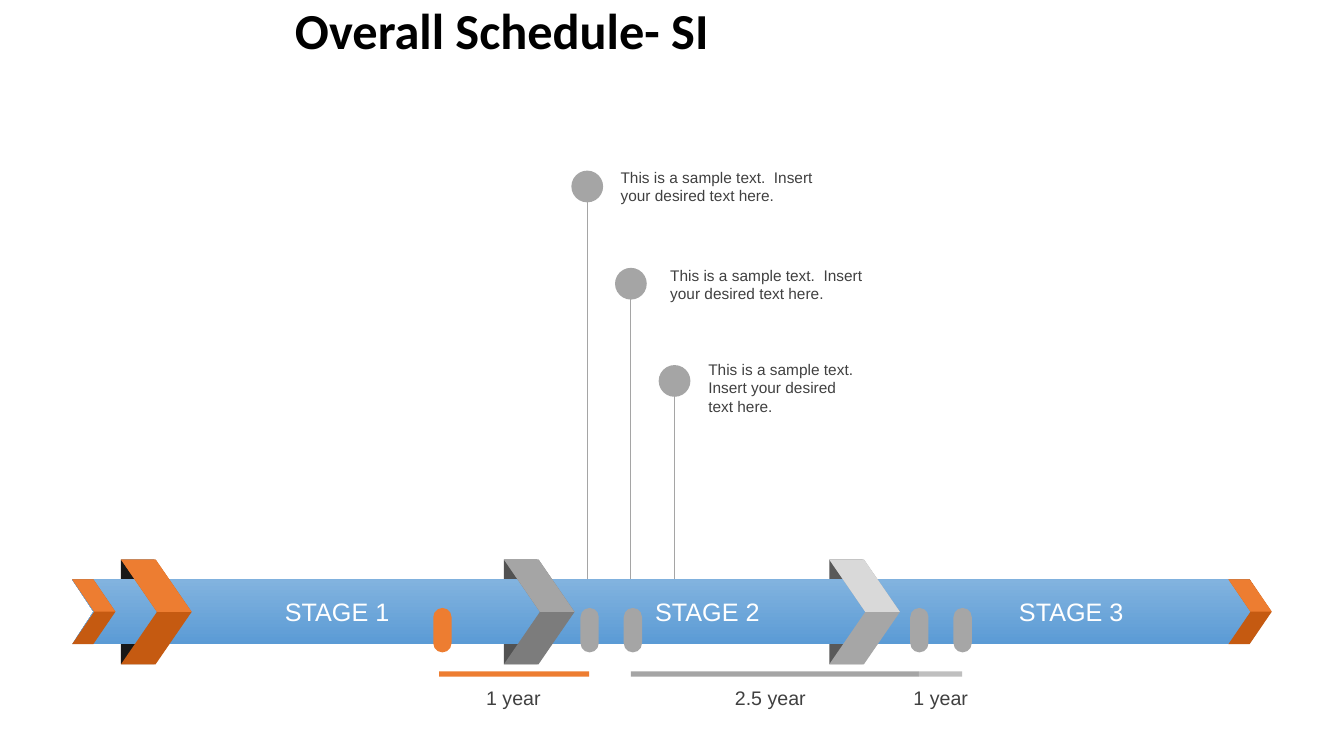
from dataclasses import dataclass

import pptx
import pptx.util
import pptx.dml.color
import pptx.enum.shapes
import pptx.enum.text
import pptx.oxml

Cm = pptx.util.Cm
Pt = pptx.util.Pt
Kind = pptx.enum.shapes.MSO_SHAPE
Align = pptx.enum.text.PP_ALIGN
Anchor = pptx.enum.text.MSO_ANCHOR
Fit = pptx.enum.text.MSO_AUTO_SIZE


@dataclass(frozen=True)
class Theme:
    head: str = "Calibri"
    body: str = "Arial"
    title: int = 36
    stage: int = 18
    span: int = 14
    note: int = 11
    black: str = "000000"
    white: str = "FFFFFF"
    ink: str = "404040"
    blue: str = "5B9BD5"
    sky: str = "82B3DF"
    orange: str = "ED7D31"
    rust: str = "C55A11"
    gray: str = "A5A5A5"
    ash: str = "A6A6A6"
    slate: str = "7C7C7C"
    pale: str = "D9D9D9"
    silver: str = "BFBFBF"
    night: str = "181717"
    coal: str = "525252"
    stone: str = "595959"


LOOK = Theme()
NOTE = "This is a sample text.  Insert your desired text here."
BIG = (14.1, 1.78, 2.64)  # top, width, height of a stage arrow
SMALL = (14.6, 1.09, 1.63)  # top, width, height of an end arrow
SLANT = 0.51


def rgb(code):
    return pptx.dml.color.RGBColor.from_string(code)


def paint(shape, color):
    shape.shadow.inherit = False
    shape.fill.solid()
    shape.fill.fore_color.rgb = rgb(color)
    shape.line.fill.background()


def block(shapes, kind, box, color, bend=None):
    shape = shapes.add_shape(kind, *map(Cm, box))
    if bend is not None:
        shape.adjustments[0] = bend
    paint(shape, color)
    return shape


def style(part, font):
    for key, value in font.items():
        setattr(part.font, key, value)


def label(shapes, text, box, size, color, wrap=False, align=Align.LEFT):
    shape = shapes.add_textbox(*map(Cm, box))
    frame = shape.text_frame
    frame.word_wrap = wrap
    frame.auto_size = Fit.SHAPE_TO_FIT_TEXT
    para = frame.paragraphs[0]
    para.alignment = align
    run = para.add_run()
    run.text = text
    style(run, {"name": LOOK.body, "size": Pt(size)})
    run.font.color.rgb = rgb(color)


def arrow(shapes, left, form, light, dark):
    """Draw a chevron whose upper half is lighter."""
    top, wide, high = form
    group = shapes.add_group_shape().shapes
    block(group, Kind.CHEVRON, (left, top, wide, high), dark, SLANT)
    mid = top + high / 2
    arm = wide * (1 - SLANT)
    points = [(left + arm, top), (left + wide, mid),
              (left + wide - arm, mid)]
    pen = group.build_freeform(Cm(left), Cm(top))
    pen.add_line_segments([(Cm(x), Cm(y)) for x, y in points], close=True)
    paint(pen.convert_to_shape(), light)


def pin(shapes, x, y, foot):
    """Draw a stem that rises from the foot to a dot centred at x, y."""
    stem = shapes.add_connector(pptx.enum.shapes.MSO_CONNECTOR.STRAIGHT,
                                Cm(x), Cm(foot), Cm(x), Cm(y))
    stem.line.color.rgb = rgb(LOOK.gray)
    stem.line.width = Pt(0.75)
    props = stem.element.spPr
    props.append(pptx.oxml.parse_xml(
        '<a:effectLst xmlns:a='
        '"http://schemas.openxmlformats.org/drawingml/2006/main"/>'))
    block(shapes, Kind.OVAL, (x - 0.4, y - 0.4, 0.8, 0.8), LOOK.gray)


def band(shapes):
    shape = block(shapes, Kind.CHEVRON, (1.82, 14.6, 30.2, 1.63),
                  LOOK.blue, 0.33)
    shape.fill.gradient()
    shape.fill.gradient_angle = 90
    for stop, color in zip(shape.fill.gradient_stops, (LOOK.blue, LOOK.sky)):
        stop.color.rgb = rgb(color)


def head(slide, text):
    title = slide.shapes.title
    place = {"left": 7.18, "top": 0, "width": 26.67, "height": 1.47}
    for key, value in place.items():
        setattr(title, key, Cm(value))
    frame = title.text_frame
    frame.vertical_anchor = Anchor.MIDDLE
    frame.auto_size = Fit.NONE
    frame.word_wrap = True
    para = frame.paragraphs[0]
    para.alignment = Align.LEFT
    run = para.add_run()
    run.text = text
    style(run, {"name": LOOK.head, "size": Pt(LOOK.title), "bold": True})
    run.font.color.rgb = rgb(LOOK.black)


def main():
    deck = pptx.Presentation()
    deck.slide_width, deck.slide_height = Cm(33.87), Cm(19.05)
    slide = deck.slides.add_slide(deck.slide_layouts[5])
    shapes = slide.shapes
    head(slide, "Overall Schedule- SI")

    stages = [
        (3.05, LOOK.night, LOOK.orange, LOOK.rust, "STAGE 1", 6.93),
        (12.7, LOOK.coal, LOOK.gray, LOOK.slate, "STAGE 2", 16.26),
        (20.9, LOOK.stone, LOOK.pale, LOOK.ash, "STAGE 3", 25.43),
    ]
    for left, shade, *_ in stages:
        block(shapes, Kind.RECTANGLE, (left, BIG[0], 0.84, BIG[2]), shade)

    notes = [(15.39, 4.11, 5.92, 1.19), (16.64, 6.58, 5.92, 1.19),
             (17.6, 8.94, 4.32, 1.68)]
    for i, box in enumerate(notes):
        pin(shapes, 14.8 + 1.1 * i, 4.7 + 2.45 * i, 14.73)
        label(shapes, NOTE, box, LOOK.note, LOOK.ink, wrap=True)

    band(shapes)
    for left in (1.82, 30.96):
        arrow(shapes, left, SMALL, LOOK.orange, LOOK.rust)
    for left, _, light, dark, name, start in stages:
        arrow(shapes, left, BIG, light, dark)
        label(shapes, name, (start, 14.91, 3.2, 1.02), LOOK.stage, LOOK.white)

    pills = [(10.92, LOOK.orange), (14.63, LOOK.gray), (15.72, LOOK.gray),
             (22.94, LOOK.ash), (24.03, LOOK.ash)]
    for left, color in pills:
        block(shapes, Kind.ROUNDED_RECTANGLE, (left, 15.32, 0.46, 1.12),
              color, 0.5)

    spans = [
        (11.07, 3.78, LOOK.orange, "1 year", 11.99, 1.9),
        (15.9, 7.26, LOOK.gray, "2.5 year", 18.26, 2.31),
        (23.16, 1.09, LOOK.silver, "1 year", 22.76, 1.9),
    ]
    for left, wide, color, text, start, room in spans:
        block(shapes, Kind.RECTANGLE, (left, 16.92, wide, 0.13), color)
        label(shapes, text, (start, 17.15, room, 0.86), LOOK.span, LOOK.ink,
              align=Align.CENTER)

    deck.save("out.pptx")


if __name__ == "__main__":
    main()
